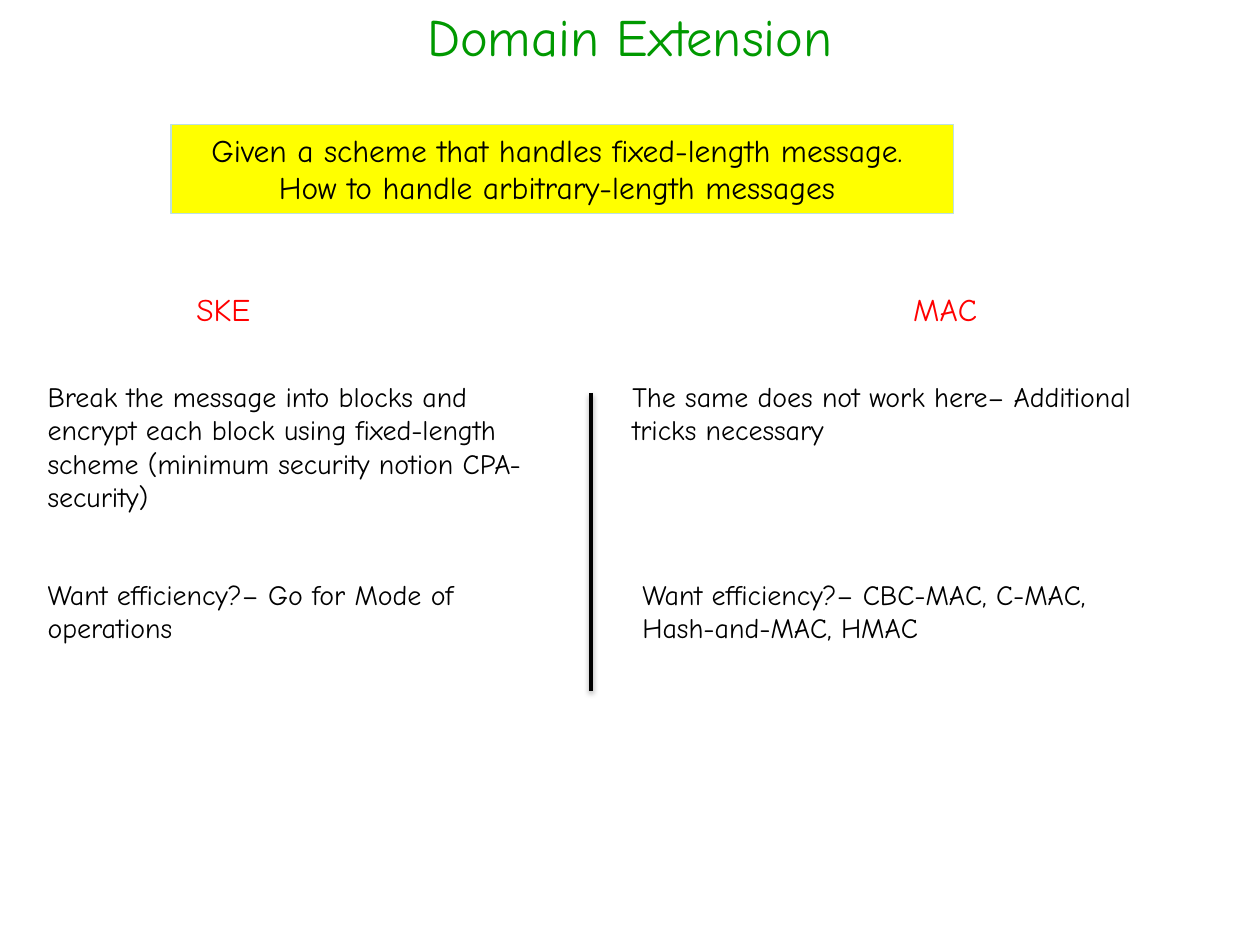
from lxml.etree import SubElement
from pptx import Presentation
from pptx.dml.color import RGBColor
from pptx.enum.shapes import MSO_CONNECTOR, MSO_SHAPE
from pptx.enum.text import MSO_ANCHOR, MSO_AUTO_SIZE, PP_ALIGN
from pptx.oxml.ns import qn
from pptx.util import Cm, Pt

GREEN, RED, BLACK = "009900", "FF0000", "000000"
YELLOW, PALE_BLUE = "FFFF00", "BBE0E3"


def colour(value):
    return RGBColor.from_string(value)


def apply(target, values):
    for name, value in values.items():
        setattr(target, name, value)


class PageBuilder:
    font = "Comic Neue"

    def __init__(self, page):
        self.page = page

    def fill_text(self, box, lines, size, ink, align=PP_ALIGN.LEFT, **frame_format):
        frame = box.text_frame
        apply(frame, {"word_wrap": True, "vertical_anchor": MSO_ANCHOR.TOP, **frame_format})
        for index, line in enumerate(lines):
            para = frame.add_paragraph() if index else frame.paragraphs[0]
            para.alignment = align
            span = para.add_run()
            span.text = line
            apply(span.font, {"name": self.font, "size": Pt(size)})
            span.font.color.rgb = colour(ink)

    def text(self, area, line, size, ink, **text_format):
        box = self.page.shapes.add_textbox(*map(Cm, area))
        self.fill_text(box, [line], size, ink, **text_format)

    def banner(self, area, lines):
        box = self.page.shapes.add_shape(MSO_SHAPE.RECTANGLE, *map(Cm, area))
        box.shadow.inherit = False
        box.fill.solid()
        box.fill.fore_color.rgb = colour(YELLOW)
        box.line.color.rgb = colour(PALE_BLUE)
        box.line.width = Pt(0.75)
        self.fill_text(box, lines, 18, BLACK, PP_ALIGN.CENTER,
                       word_wrap=False, auto_size=MSO_AUTO_SIZE.SHAPE_TO_FIT_TEXT)

    def divider(self, left, top, bottom):
        line = self.page.shapes.add_connector(
            MSO_CONNECTOR.STRAIGHT, *map(Cm, (left, top, left, bottom)))
        line.line.color.rgb = colour(BLACK)
        line.line.width = Pt(2)
        effects = SubElement(line.element.spPr, qn("a:effectLst"))
        shadow = SubElement(effects, qn("a:outerShdw"), blurRad=str(Pt(3.1)),
                            dist=str(Pt(1.6)), dir="5400000", rotWithShape="0")
        tint = SubElement(shadow, qn("a:srgbClr"), val=BLACK)
        SubElement(tint, qn("a:alpha"), val="38000")


def main():
    deck = Presentation()
    apply(deck, {"slide_width": Cm(25.4), "slide_height": Cm(19.05)})
    builder = PageBuilder(deck.slides.add_slide(deck.slide_layouts[6]))

    builder.text((0, -0.08, 25.4, 1.6), "Domain Extension", 30, GREEN,
                 align=PP_ALIGN.CENTER, vertical_anchor=MSO_ANCHOR.MIDDLE)
    builder.divider(11.91, 7.92, 13.92)
    builder.banner((3.45, 2.51, 15.77, 1.8), [
        "Given a scheme that handles fixed-length message. ",
        "How to handle arbitrary-length messages ",
    ])

    fit = {"auto_size": MSO_AUTO_SIZE.SHAPE_TO_FIT_TEXT}
    for left, width, heading in [(3.71, 1.75, "SKE"), (18.16, 1.93, "MAC")]:
        builder.text((left, 5.72, width, 1.02), heading, 18, RED, word_wrap=False, **fit)

    notes = [
        (0.71, 7.52, 3, "Break the message into blocks and encrypt each block using "
                        "fixed-length scheme (minimum security notion CPA-security)"),
        (12.5, 7.52, 1.63, "The same does not work here– Additional tricks necessary"),
        (0.71, 11.51, 1.63, "Want efficiency?– Go for Mode of operations"),
        (12.7, 11.51, 1.63, "Want efficiency?– CBC-MAC, C-MAC, Hash-and-MAC, HMAC"),
    ]
    for left, top, height, note in notes:
        builder.text((left, top, 10.59, height), note, 16, BLACK, **fit)

    deck.save("out.pptx")


if __name__ == "__main__":
    main()
